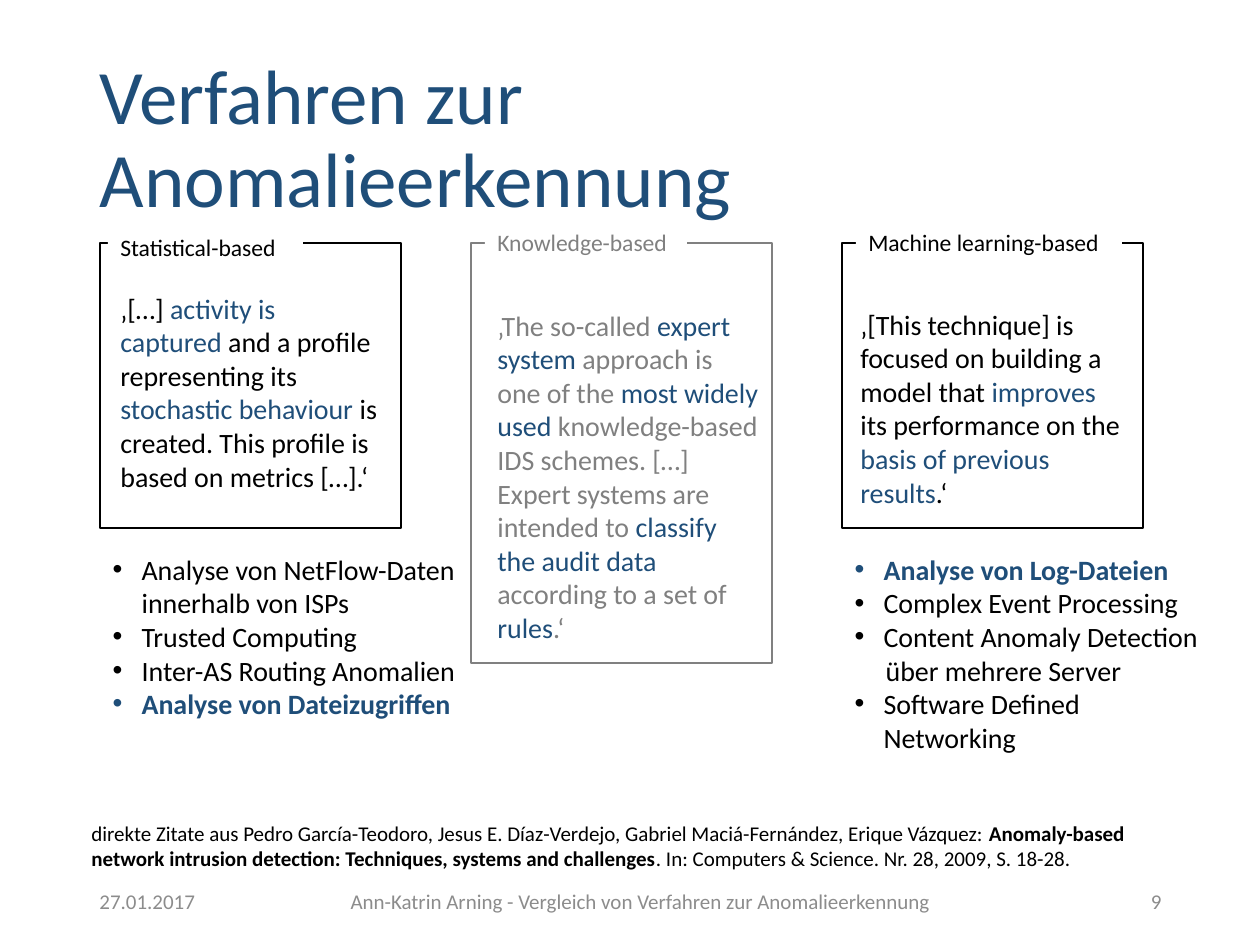
"""Slide comparing three families of anomaly detection methods."""
from dataclasses import dataclass

from lxml import etree
from pptx import Presentation
from pptx.dml.color import RGBColor
from pptx.enum import shapes, text
from pptx.oxml import ns
from pptx.util import Emu, Pt

PX = 914400 / 126
ACCENT, BLACK, GREY, FOOTER, WHITE = "1F4E79", "000000", "808080", "8C8C8C", "FFFFFF"
BULLET_INDENT = 29
CONTINUATION_INDENT = 31
FRAME_TOP, FRAME_WIDTH, LABEL_HEIGHT = 243, 301, 42


@dataclass(frozen=True)
class Box:
    """Position and size in px."""
    left: int
    top: int
    width: int
    height: int


@dataclass(frozen=True)
class Method:
    """Framed quote with a label; every second quote part is accented."""
    frame: Box
    label_box: Box
    label: str
    quote_box: Box
    quote: tuple[str, ...]
    color: str


@dataclass(frozen=True)
class Item:
    """One list line."""
    wording: str
    highlighted: bool = False
    bulleted: bool = True


@dataclass(frozen=True)
class FooterField:
    """One field of the footer row."""
    box: Box
    wording: str
    alignment: text.PP_ALIGN


METHODS = (
    Method(Box(100, FRAME_TOP, FRAME_WIDTH, 285),
           Box(108, 227, 195, LABEL_HEIGHT), "Statistical-based",
           Box(108, 285, 286, 217),
           ("‚[…] ", "activity is captured ", "and a profile representing its ",
            "stochastic behaviour ",
            "is created. This profile is based on metrics […].‘"), BLACK),
    Method(Box(471, FRAME_TOP, FRAME_WIDTH, 420),
           Box(485, 222, 202, LABEL_HEIGHT), "Knowledge-based",
           Box(485, 302, 286, 352),
           ("‚The so-called ", "expert system ", "approach is one of the ",
            "most widely used ",
            "knowledge-based IDS schemes. […] Expert systems are intended to ",
            "classify the audit data ", "according to a set of ", "rules", ".‘"), GREY),
    Method(Box(842, FRAME_TOP, FRAME_WIDTH, 285),
           Box(856, 222, 266, LABEL_HEIGHT), "Machine learning-based",
           Box(848, 301, 291, 217),
           ("‚[This technique] is focused on building a model that ", "improves ",
            "its performance on the ", "basis of previous results", ".‘"), BLACK),
)

LISTS = (
    (Box(100, 546, 369, 217),
     (Item("Analyse von NetFlow-Daten innerhalb von ISPs"),
      Item("Trusted Computing"),
      Item("Inter-AS Routing Anomalien"),
      Item("Analyse von Dateizugriffen", highlighted=True))),
    (Box(842, 546, 373, 217),
     (Item("Analyse von Log-Dateien", highlighted=True),
      Item("Complex Event Processing"),
      Item("Content Anomaly Detection"),
      Item("über mehrere Server", bulleted=False),
      Item("Software Defined Networking"))),
)

FOOTER_FIELDS = (
    FooterField(Box(87, 876, 284, 50), "27.01.2017", text.PP_ALIGN.LEFT),
    FooterField(Box(325, 882, 631, 38),
                "Ann-Katrin Arning - Vergleich von Verfahren zur Anomalieerkennung",
                text.PP_ALIGN.CENTER),
    FooterField(Box(890, 876, 284, 50), "9", text.PP_ALIGN.RIGHT),
)

CITATION = (
    "direkte Zitate aus Pedro García-Teodoro, Jesus E. Díaz-Verdejo, "
    "Gabriel Maciá-Fernández, Erique Vázquez: ",
    "Anomaly-based network intrusion detection: Techniques, systems and challenges",
    ". In: Computers & Science. Nr. 28, 2009, S. 18-28.",
)


def px(length: int) -> Emu:
    """Turn px into EMU."""
    return Emu(round(length * PX))


def rgb(value: str) -> RGBColor:
    """Turn a hex string into a colour."""
    return RGBColor.from_string(value)


def bounds(box: Box) -> tuple[Emu, ...]:
    """Give a box in EMU."""
    return px(box.left), px(box.top), px(box.width), px(box.height)


def place(shape, box: Box) -> None:
    """Move and size a shape."""
    shape.left, shape.top, shape.width, shape.height = bounds(box)


def format_run(run, size: float, color: str, bold: bool = False) -> None:
    """Set the font of a run."""
    run.font.name = "Calibri"
    run.font.size = Pt(size)
    run.font.bold = bold
    run.font.color.rgb = rgb(color)


def add_text(slide, box: Box, parts: tuple[str, ...], size: float, color: str,
             accent: str | None = None, bold_accent: bool = False):
    """Add a wrapped text box whose every second part is accented."""
    shape = slide.shapes.add_textbox(*bounds(box))
    shape.text_frame.word_wrap = True
    paragraph = shape.text_frame.paragraphs[0]
    for index, part in enumerate(parts):
        accented = index % 2 == 1
        run = paragraph.add_run()
        run.text = part
        format_run(run, size, accent if accented and accent else color,
                   accented and bold_accent)
    return shape


def add_white_text(slide, box: Box, parts: tuple[str, ...], size: float, color: str) -> None:
    """Add text on a white ground."""
    shape = add_text(slide, box, parts, size, color, ACCENT)
    shape.fill.solid()
    shape.fill.fore_color.rgb = rgb(WHITE)


def add_method(slide, method: Method) -> None:
    """Draw the frame, label and quote of a method."""
    frame = slide.shapes.add_shape(shapes.MSO_SHAPE.RECTANGLE, *bounds(method.frame))
    frame.shadow.inherit = False
    frame.fill.background()
    frame.line.color.rgb = rgb(method.color)
    frame.line.width = Pt(1)
    add_white_text(slide, method.label_box, (method.label,), 13.5, method.color)
    add_white_text(slide, method.quote_box, method.quote, 16, method.color)


def set_bullet(paragraph, bulleted: bool) -> None:
    """Set the indent and bullet of a paragraph."""
    properties = paragraph._p.get_or_add_pPr()
    margin = BULLET_INDENT if bulleted else CONTINUATION_INDENT
    properties.set("marL", str(px(margin)))
    properties.set("indent", str(px(-BULLET_INDENT if bulleted else 0)))
    if bulleted:
        etree.SubElement(properties, ns.qn("a:buFont"), typeface="Arial")
        etree.SubElement(properties, ns.qn("a:buChar"), char="•")
    else:
        etree.SubElement(properties, ns.qn("a:buNone"))


def fill_list(placeholder, box: Box, items: tuple[Item, ...]) -> None:
    """Fill a body placeholder with list lines."""
    place(placeholder, box)
    frame = placeholder.text_frame
    frame.auto_size = text.MSO_AUTO_SIZE.NONE
    frame.text = "\n".join(item.wording for item in items)
    for paragraph, item in zip(frame.paragraphs, items):
        paragraph.space_before = Pt(0)
        set_bullet(paragraph, item.bulleted)
        format_run(paragraph.runs[0], 16, ACCENT if item.highlighted else BLACK,
                   item.highlighted)


def fill_title(title) -> None:
    """Fill the title placeholder."""
    place(title, Box(87, 50, 1086, 183))
    frame = title.text_frame
    frame.auto_size = text.MSO_AUTO_SIZE.NONE
    frame.vertical_anchor = text.MSO_ANCHOR.MIDDLE
    frame.text = "Verfahren zur Anomalieerkennung"
    paragraph = frame.paragraphs[0]
    paragraph.alignment = text.PP_ALIGN.LEFT
    paragraph.line_spacing = 0.9
    format_run(paragraph.runs[0], 44, ACCENT)


def main() -> None:
    """Build and save the slide."""
    presentation = Presentation()
    presentation.slide_width, presentation.slide_height = px(1260), px(945)
    slide = presentation.slides.add_slide(presentation.slide_layouts[3])
    fill_title(slide.shapes.title)
    for index, (box, items) in enumerate(LISTS, start=1):
        fill_list(slide.placeholders[index], box, items)
    for method in METHODS:
        add_method(slide, method)
    add_text(slide, Box(79, 814, 1123, 63), CITATION, 12, BLACK, bold_accent=True)
    for field in FOOTER_FIELDS:
        shape = add_text(slide, field.box, (field.wording,), 12, FOOTER)
        shape.text_frame.vertical_anchor = text.MSO_ANCHOR.MIDDLE
        shape.text_frame.paragraphs[0].alignment = field.alignment
    presentation.save("out.pptx")


if __name__ == "__main__":
    main()
